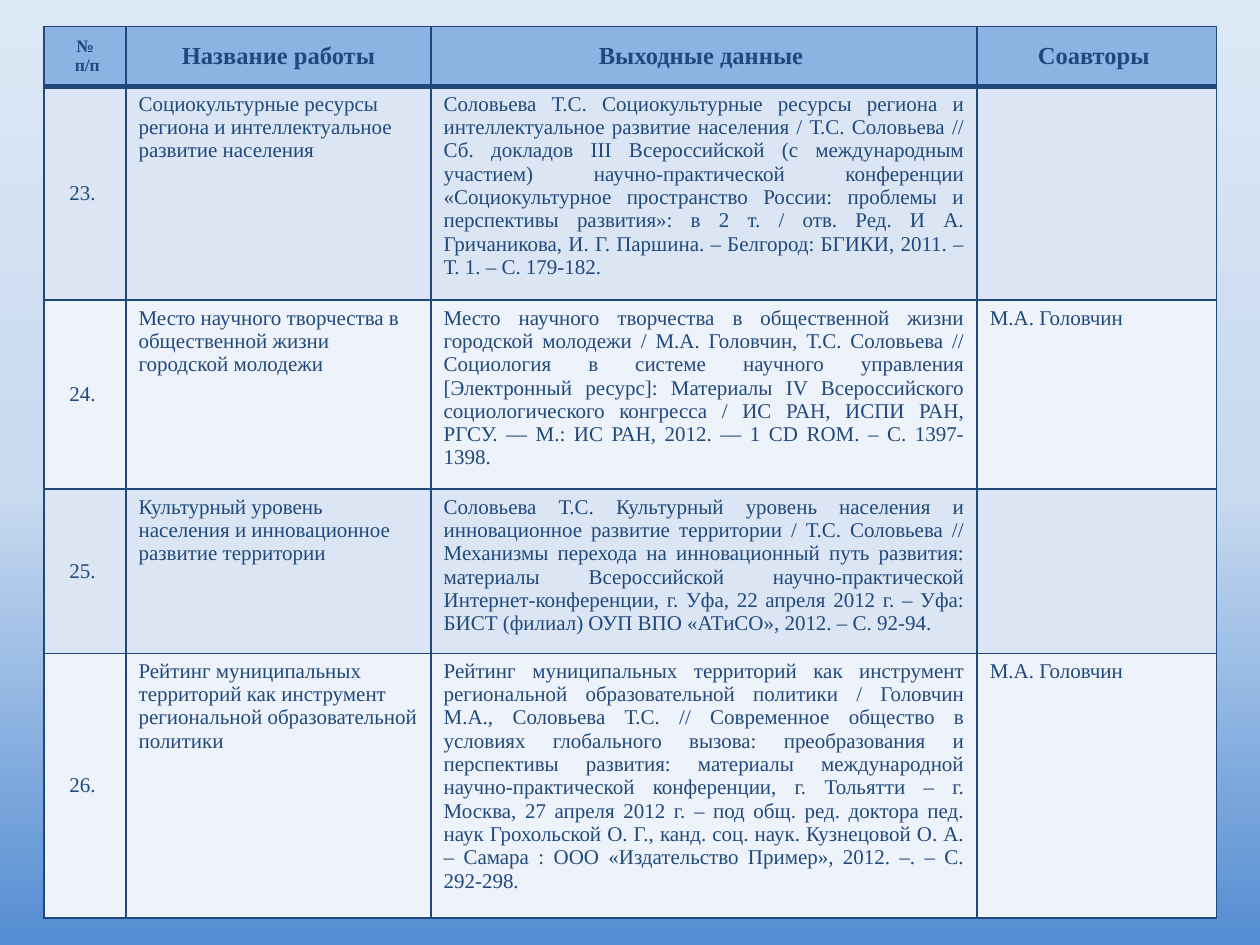
"""Build a slide with a table of publications 23 to 26."""
from lxml.etree import SubElement
from copy import deepcopy
from pptx import Presentation
from pptx.dml.color import RGBColor
from pptx.enum.text import MSO_ANCHOR, PP_ALIGN
from pptx.oxml.ns import qn
from pptx.util import Cm, Pt

HEADERS = ["№\n п/п", "Название работы", "Выходные данные ", "Соавторы "]
PUBLICATIONS = [
    ("23. ", "Социокультурные ресурсы региона и интеллектуальное развитие населения",
     "Соловьева Т.С. Социокультурные ресурсы региона и интеллектуальное развитие населения / "
     "Т.С. Соловьева // Сб. докладов III Всероссийской (с международным участием) "
     "научно-практической конференции «Социокультурное пространство России: проблемы и "
     "перспективы развития»: в 2 т. / отв. Ред. И А. Гричаникова, И. Г. Паршина. – Белгород: "
     "БГИКИ, 2011. – Т. 1. – С. 179-182.", ""),
    ("24. ", "Место научного творчества в общественной жизни городской молодежи",
     "Место научного творчества в общественной жизни городской молодежи / М.А. Головчин, "
     "Т.С. Соловьева // Социология в системе научного управления [Электронный ресурс]: "
     "Материалы IV Всероссийского социологического конгресса / ИС РАН, ИСПИ РАН, РГСУ. — М.: "
     "ИС РАН, 2012. — 1 CD ROM. – С. 1397-1398.", "М.А. Головчин"),
    ("25. ", "Культурный уровень населения и инновационное развитие территории",
     "Соловьева Т.С. Культурный уровень населения и инновационное развитие территории / "
     "Т.С. Соловьева // Механизмы перехода на инновационный путь развития: материалы "
     "Всероссийской научно-практической Интернет-конференции, г. Уфа, 22 апреля 2012 г. – Уфа: "
     "БИСТ (филиал) ОУП ВПО «АТиСО», 2012. – С. 92-94.", ""),
    ("26. ", "Рейтинг муниципальных территорий как инструмент региональной образовательной политики",
     "Рейтинг муниципальных территорий как инструмент региональной образовательной политики / "
     "Головчин М.А., Соловьева Т.С. // Современное общество в условиях глобального вызова: "
     "преобразования и перспективы развития: материалы международной научно-практической "
     "конференции, г. Тольятти – г. Москва, 27 апреля 2012 г. – под общ. ред. доктора пед. наук "
     "Грохольской О. Г., канд. соц. наук. Кузнецовой О. А. – Самара : ООО «Издательство "
     "Пример», 2012. –. – С. 292-298.", "М.А. Головчин"),
]
COLUMN_WIDTHS = [1.65, 6.15, 11.01, 4.82]
ROW_HEIGHTS = [1.21, 4.31, 3.81, 3.31, 5.34]
ALIGNMENTS = [PP_ALIGN.CENTER, PP_ALIGN.LEFT, PP_ALIGN.JUSTIFY, PP_ALIGN.LEFT]
COLORS = {"ink": "1F497D", "header": "8DB3E2", "odd": "DBE5F4", "even": "EEF2FA"}
BACKGROUND_STOPS = [(0, "548DD2"), (0.48, "C8DAF0"), (1, "DDE8F6")]


def paint_background(slide):
    fill = slide.background.fill
    fill.gradient()
    fill.gradient_angle = 90
    stop_list = slide._element.find(".//" + qn("a:gsLst"))
    stop_list.insert(1, deepcopy(stop_list[0]))
    for stop, (position, color) in zip(fill.gradient_stops, BACKGROUND_STOPS):
        stop.position = position
        stop.color.rgb = RGBColor.from_string(color)


def draw_borders(cell, row):
    properties = cell._tc.get_or_add_tcPr()
    widths = {"L": 1, "R": 1, "T": 3 if row == 1 else 1, "B": 3 if row == 0 else 1}
    for side, width in widths.items():
        line = SubElement(properties, qn(f"a:ln{side}"), w=str(Pt(width)))
        solid = SubElement(line, qn("a:solidFill"))
        SubElement(solid, qn("a:srgbClr"), val=COLORS["ink"])


def fill_cell(cell, text, row, column):
    is_header = row == 0
    draw_borders(cell, row)
    cell.fill.solid()
    band = "header" if is_header else "odd" if row % 2 else "even"
    cell.fill.fore_color.rgb = RGBColor.from_string(COLORS[band])
    cell.vertical_anchor = MSO_ANCHOR.MIDDLE if is_header or column == 0 else MSO_ANCHOR.TOP
    cell.text = text
    for paragraph in cell.text_frame.paragraphs:
        paragraph.alignment = PP_ALIGN.CENTER if is_header else ALIGNMENTS[column]
        font = paragraph.font
        font.name = "Times New Roman"
        font.size = Pt(12 if not is_header else 10 if column == 0 else 14)
        font.bold = is_header
        font.color.rgb = RGBColor.from_string(COLORS["ink"])


def main():
    presentation = Presentation()
    presentation.slide_width, presentation.slide_height = Cm(25.4), Cm(19.05)
    slide = presentation.slides.add_slide(presentation.slide_layouts[6])
    paint_background(slide)
    table = slide.shapes.add_table(
        len(ROW_HEIGHTS), len(COLUMN_WIDTHS), Cm(0.89), Cm(0.53),
        Cm(sum(COLUMN_WIDTHS)), Cm(sum(ROW_HEIGHTS))).table
    table.first_row = table.horz_banding = False
    for column, width in zip(table.columns, COLUMN_WIDTHS):
        column.width = Cm(width)
    for row, height in zip(table.rows, ROW_HEIGHTS):
        row.height = Cm(height)
    for row, texts in enumerate([HEADERS, *PUBLICATIONS]):
        for column, text in enumerate(texts):
            fill_cell(table.cell(row, column), text, row, column)
    presentation.save("out.pptx")


if __name__ == "__main__":
    main()
